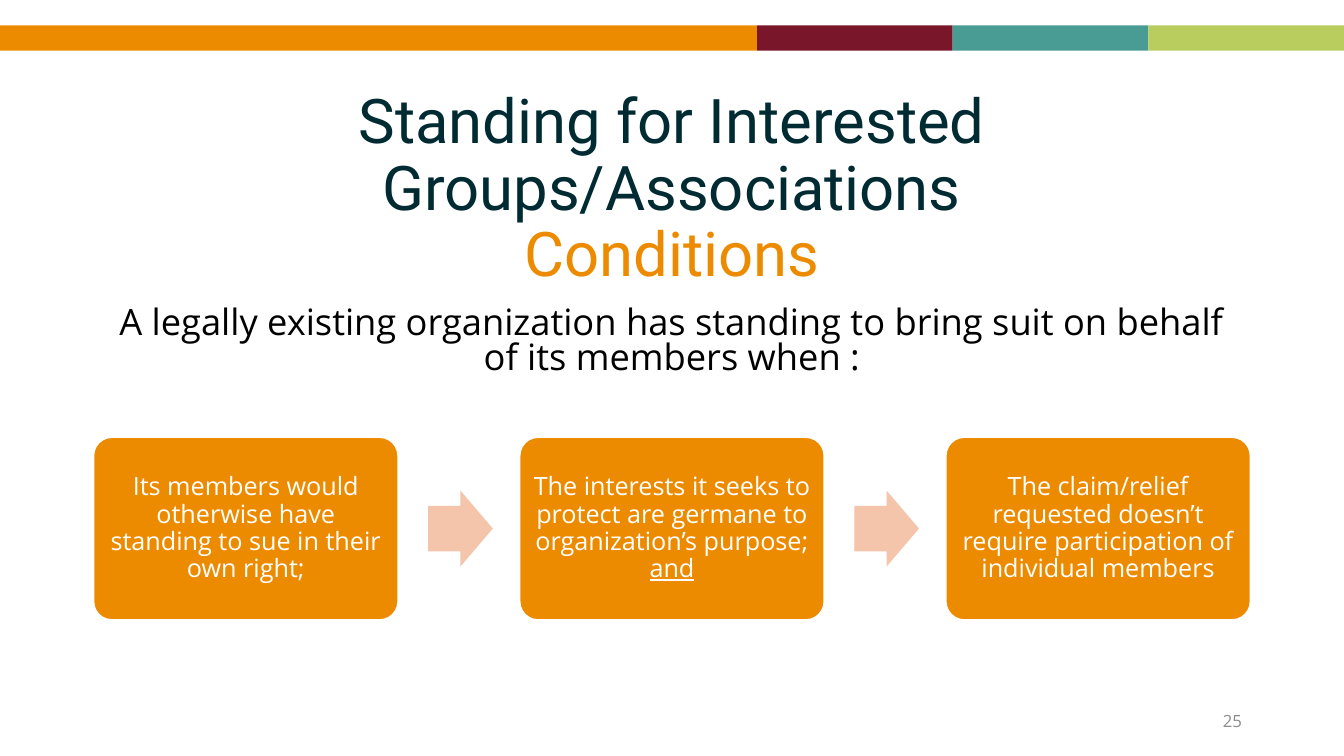
from pptx import Presentation
from pptx.dml.color import RGBColor
from pptx.enum.shapes import MSO_SHAPE
from pptx.enum.text import MSO_ANCHOR, MSO_AUTO_SIZE, PP_ALIGN
from pptx.util import Cm, Pt

COLORS = {
    "orange": "ED8B00", "maroon": "79162A", "teal": "499C94", "lime": "B8CD5E",
    "navy": "012B32", "peach": "F4C4AB", "black": "000000", "white": "FFFFFF",
    "grey": "8C8C8C",
}

# Content: runs are (text, format overrides)
TITLE = [("Standing for Interested Groups/Associations\v", {}),
         ("Conditions", {"color": "orange"})]
INTRO = [("A legally existing organization has standing to bring suit "
          "on behalf of its members when :", {})]
CONDITIONS = [
    [("Its members would otherwise have standing to sue in their own right;", {})],
    [("The interests it seeks to protect are germane to organization’s purpose; ", {}),
     ("and", {"underline": True})],
    [("The claim/relief requested doesn’t require participation of "
      "individual members", {})],
]
PAGE_NUMBER = [("25", {})]
BANNER = [("orange", 19.08), ("maroon", 4.93), ("teal", 4.93), ("lime", 4.93)]

# Layout in centimetres
SLIDE_W, SLIDE_H = 33.87, 19.05
BANNER_TOP = BANNER_H = 0.64
BOX_LEFT, BOX_TOP, BOX_W, BOX_H = 2.36, 11.02, 7.67, 4.6
BOX_PITCH = 10.74
ARROW_W, ARROW_H = 1.63, 1.91
ARROW_GAP = 0.76


def rgb(name):
    return RGBColor.from_string(COLORS[name])


def write(holder, runs, size, color, font="Open Sans", align=PP_ALIGN.CENTER,
          anchor=MSO_ANCHOR.MIDDLE, spacing=1.0, inset=None):
    frame = holder.text_frame
    frame.word_wrap = True
    frame.auto_size = MSO_AUTO_SIZE.NONE
    frame.vertical_anchor = anchor
    if inset is not None:
        frame.margin_left = frame.margin_right = Cm(inset)
        frame.margin_top = frame.margin_bottom = Cm(inset)
    paragraph = frame.paragraphs[0]
    paragraph.alignment = align
    paragraph.line_spacing = spacing
    for text, extra in runs:
        run = paragraph.add_run()
        run.text = text.rstrip("\v")
        run.font.name = font
        run.font.size = Pt(size)
        run.font.color.rgb = rgb(extra.get("color", color))
        run.font.underline = extra.get("underline")
        if text.endswith("\v"):
            paragraph.add_line_break()


def add_block(slide, kind, left, top, width, height, fill, line=None):
    block = slide.shapes.add_shape(kind, Cm(left), Cm(top), Cm(width), Cm(height))
    block.shadow.inherit = False
    block.fill.solid()
    block.fill.fore_color.rgb = rgb(fill)
    if line:
        block.line.color.rgb = rgb(line)
        block.line.width = Pt(1)
    else:
        block.line.fill.background()
    return block


def main():
    deck = Presentation()
    deck.slide_width, deck.slide_height = Cm(SLIDE_W), Cm(SLIDE_H)
    slide = deck.slides.add_slide(deck.slide_layouts[5])

    # Colour banner
    left = 0
    for color, width in BANNER:
        add_block(slide, MSO_SHAPE.RECTANGLE, left, BANNER_TOP, width, BANNER_H, color)
        left += width

    # Title and introduction
    title = slide.shapes.title
    title.left, title.top, title.width, title.height = Cm(2.33), Cm(2.95), Cm(29.21), Cm(3.68)
    write(title, TITLE, 44, "navy", font="Roboto", spacing=0.9)
    intro = slide.shapes.add_textbox(Cm(2.33), Cm(7.62), Cm(29.21), Cm(2.08))
    write(intro, INTRO, 25.9, "black", anchor=MSO_ANCHOR.TOP, spacing=0.8)

    # Conditions, with an arrow between neighbours
    for index, condition in enumerate(CONDITIONS):
        left = BOX_LEFT + index * BOX_PITCH
        box = add_block(slide, MSO_SHAPE.ROUNDED_RECTANGLE, left, BOX_TOP,
                        BOX_W, BOX_H, "orange", line="white")
        box.adjustments[0] = 0.1
        write(box, condition, 18, "white", spacing=0.9, inset=0.18)
        if index < len(CONDITIONS) - 1:
            arrow = add_block(slide, MSO_SHAPE.RIGHT_ARROW, left + BOX_W + ARROW_GAP,
                              BOX_TOP + (BOX_H - ARROW_H) / 2, ARROW_W, ARROW_H, "peach")
            arrow.adjustments[0] = 0.6
            arrow.adjustments[1] = 0.5

    # Page number
    page = slide.shapes.add_textbox(Cm(23.93), Cm(17.65), Cm(7.62), Cm(1.02))
    write(page, PAGE_NUMBER, 12, "grey", align=PP_ALIGN.RIGHT)

    deck.save("out.pptx")


if __name__ == "__main__":
    main()
